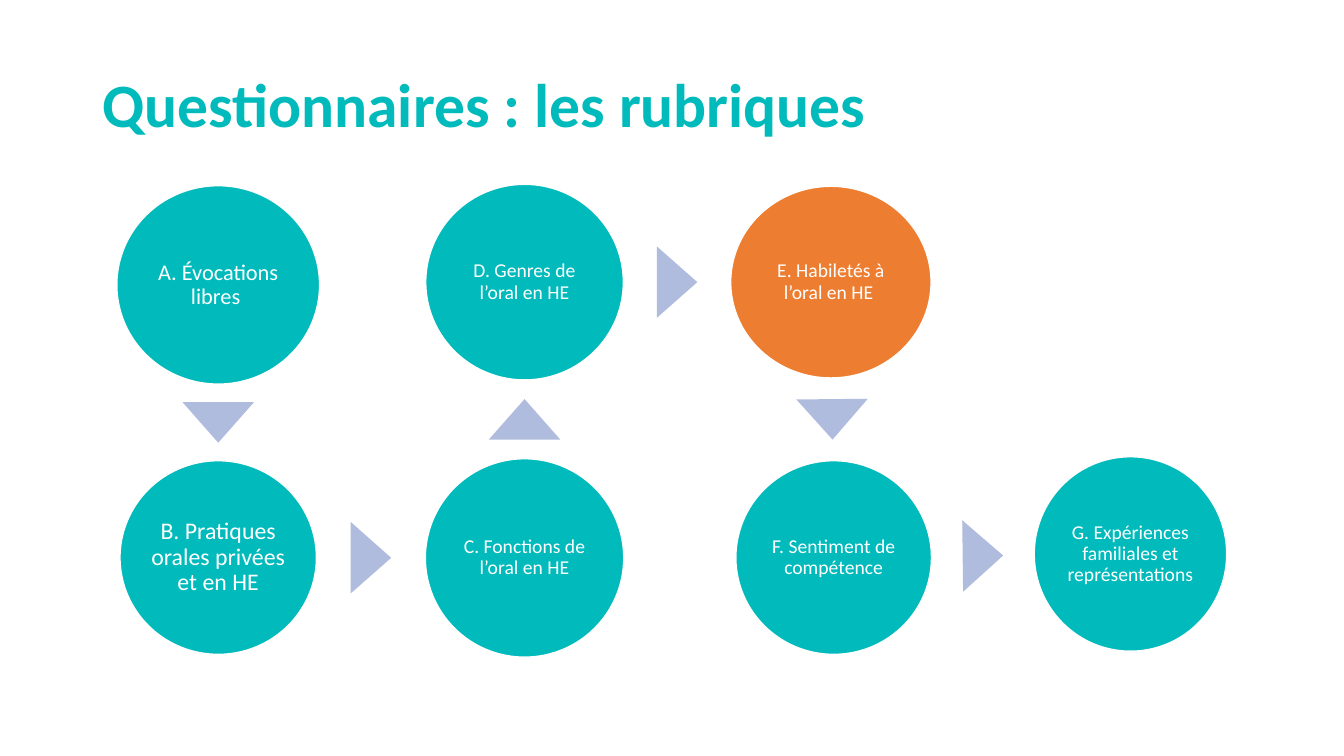
from dataclasses import dataclass
from itertools import pairwise
from math import atan2, degrees, hypot

from pptx import Presentation
from pptx.dml.color import RGBColor
from pptx.enum.shapes import MSO_SHAPE
from pptx.enum.text import MSO_ANCHOR, PP_ALIGN
from pptx.shapes.autoshape import Shape
from pptx.slide import Slide
from pptx.util import Cm, Pt


@dataclass(frozen=True)
class Theme:
    teal: RGBColor = RGBColor(0x00, 0xBA, 0xBC)
    orange: RGBColor = RGBColor(0xED, 0x7D, 0x31)
    lavender: RGBColor = RGBColor(0xB0, 0xBC, 0xDE)
    white: RGBColor = RGBColor(0xFF, 0xFF, 0xFF)
    font: str = "Calibri"
    title_size: int = 44
    large_size: int = 17
    medium_size: int = 16
    small_size: int = 14


THEME = Theme()


@dataclass(frozen=True)
class Section:
    """A circle of the questionnaire; centre and size in centimetres."""
    text: str
    x: float
    y: float
    width: float
    height: float
    size: int = THEME.small_size
    fill: RGBColor = THEME.teal


# Sections in reading order; each leads to the next
SECTIONS = [
    Section("A. Évocations libres ", 5.5, 7.18, 5.11, 5.0, THEME.medium_size),
    Section("B. Pratiques orales privées et en HE", 5.5, 14.05, 4.95, 4.88, THEME.large_size),
    Section("C. Fonctions de l’oral en HE", 13.22, 14.06, 5.0, 5.0),
    Section("D. Genres de l’oral en HE", 13.22, 7.11, 4.98, 4.93),
    Section("E. Habiletés à l’oral en HE ", 20.94, 7.11, 5.05, 4.83, fill=THEME.orange),
    Section("F. Sentiment de compétence", 21.01, 14.05, 4.93, 4.88),
    Section("G. Expériences familiales et représentations", 28.49, 13.96, 4.85, 4.9),
]
ARROW_WIDTH, ARROW_HEIGHT = 1.8, 1.02


def write_text(shape: Shape, text: str, *, size: int, color: RGBColor, bold: bool = False,
               align: PP_ALIGN = PP_ALIGN.LEFT, inset_x: float = 0.25,
               inset_y: float = 0.13) -> None:
    frame = shape.text_frame
    frame.word_wrap = True
    frame.vertical_anchor = MSO_ANCHOR.MIDDLE
    frame.margin_left = frame.margin_right = Cm(inset_x)
    frame.margin_top = frame.margin_bottom = Cm(inset_y)
    paragraph = frame.paragraphs[0]
    paragraph.alignment = align
    paragraph.line_spacing = 0.9
    run = paragraph.add_run()
    run.text = text
    run.font.name = THEME.font
    run.font.size = Pt(size)
    run.font.bold = bold
    run.font.color.rgb = color


def add_centred(slide: Slide, kind: MSO_SHAPE, x: float, y: float,
                width: float, height: float, fill: RGBColor) -> Shape:
    shape = slide.shapes.add_shape(
        kind, Cm(x - width / 2), Cm(y - height / 2), Cm(width), Cm(height))
    shape.shadow.inherit = False
    shape.fill.solid()
    shape.fill.fore_color.rgb = fill
    return shape


def draw_section(slide: Slide, section: Section) -> None:
    circle = add_centred(slide, MSO_SHAPE.OVAL, section.x, section.y,
                         section.width, section.height, section.fill)
    circle.line.color.rgb = THEME.white
    circle.line.width = Pt(1)
    write_text(circle, section.text, size=section.size, color=THEME.white,
               align=PP_ALIGN.CENTER, inset_x=0.05, inset_y=0.05)


def draw_arrow(slide: Slide, start: Section, end: Section) -> None:
    """Point a triangle from start to end, midway across the gap."""
    dx, dy = end.x - start.x, end.y - start.y
    distance = hypot(dx, dy)
    if abs(dx) > abs(dy):
        difference = start.width - end.width
    else:
        difference = start.height - end.height
    share = 0.5 + difference / 4 / distance
    arrow = add_centred(slide, MSO_SHAPE.ISOSCELES_TRIANGLE,
                        start.x + share * dx, start.y + share * dy,
                        ARROW_WIDTH, ARROW_HEIGHT, THEME.lavender)
    arrow.line.fill.background()
    arrow.rotation = degrees(atan2(dx, -dy))


def main() -> None:
    presentation = Presentation()
    presentation.slide_width, presentation.slide_height = Cm(33.87), Cm(19.05)
    slide = presentation.slides.add_slide(presentation.slide_layouts[6])

    # Title
    title = slide.shapes.add_textbox(Cm(2.33), Cm(0.86), Cm(29.21), Cm(3.68))
    write_text(title, "Questionnaires : les rubriques",
               size=THEME.title_size, color=THEME.teal, bold=True)

    # Circles and the arrows between them
    for section in SECTIONS:
        draw_section(slide, section)
    for start, end in pairwise(SECTIONS):
        draw_arrow(slide, start, end)

    presentation.save("out.pptx")


if __name__ == "__main__":
    main()
